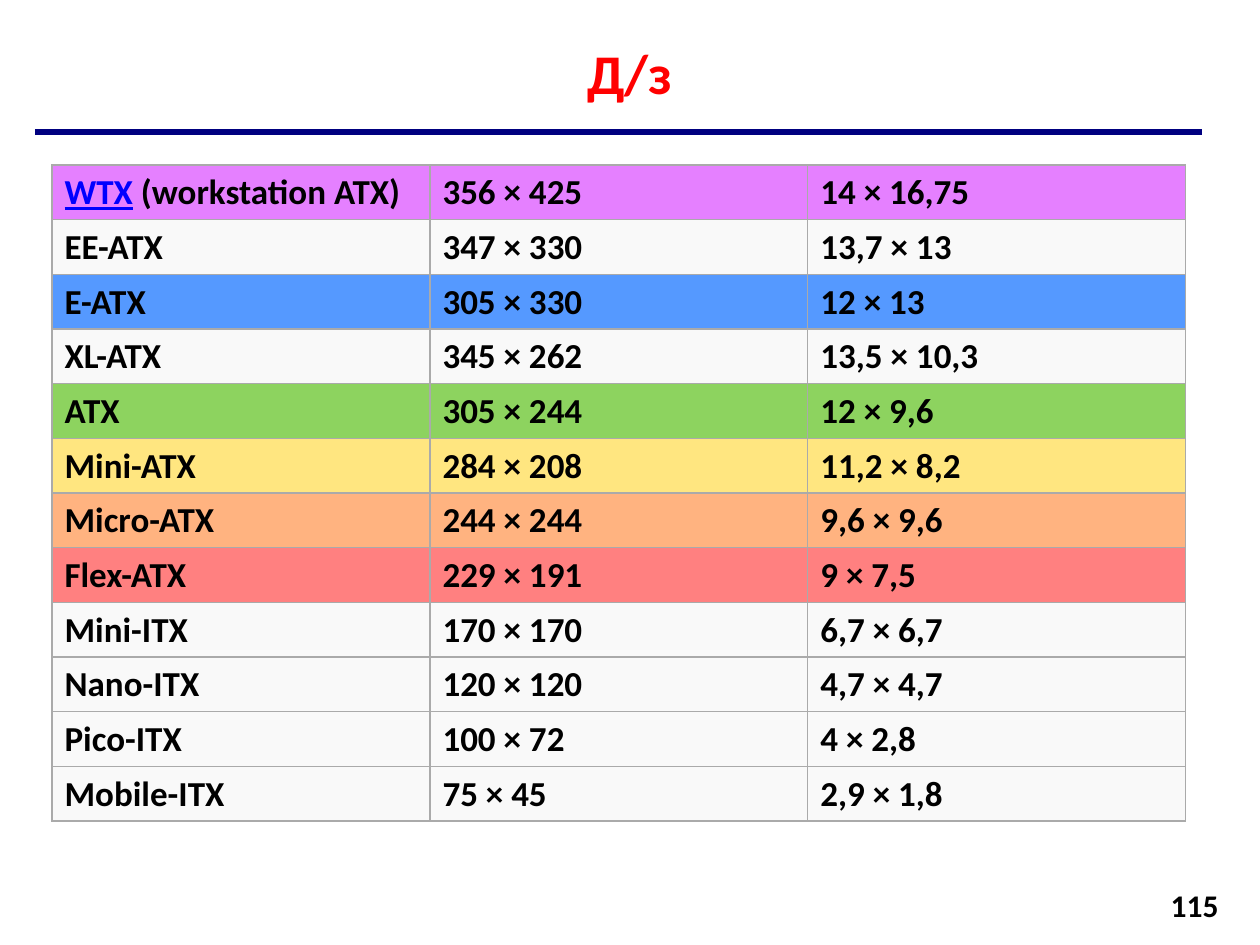
from dataclasses import dataclass

from lxml import etree
from pptx import Presentation, util as u
from pptx.dml.color import RGBColor
from pptx.enum import shapes, text
from pptx.oxml import ns

TITLE = "Д/з"
PAGE_NUMBER = "115"
FORM_FACTORS = [
    ("WTX (workstation ATX)", "356 × 425", "14 × 16,75"),
    ("EE-ATX", "347 × 330", "13,7 × 13"),
    ("E-ATX", "305 × 330", "12 × 13"),
    ("XL-ATX", "345 × 262", "13,5 × 10,3"),
    ("ATX", "305 × 244", "12 × 9,6"),
    ("Mini-ATX", "284 × 208", "11,2 × 8,2"),
    ("Micro-ATX", "244 × 244", "9,6 × 9,6"),
    ("Flex-ATX", "229 × 191", "9 × 7,5"),
    ("Mini-ITX", "170 × 170", "6,7 × 6,7"),
    ("Nano-ITX", "120 × 120", "4,7 × 4,7"),
    ("Pico-ITX", "100 × 72", "4 × 2,8"),
    ("Mobile-ITX", "75 × 45", "2,9 × 1,8"),
]
ROW_FILLS = {
    "WTX (workstation ATX)": "E580FF",
    "E-ATX": "5599FF",
    "ATX": "8DD35F",
    "Mini-ATX": "FFE680",
    "Micro-ATX": "FFB380",
    "Flex-ATX": "FF8080",
}
UNDERLINED = "WTX"


@dataclass(frozen=True)
class Theme:
    font: str = "Calibri"
    ink: str = "000000"
    title: str = "FF0000"
    rule: str = "000080"
    underlined: str = "0000FF"
    plain_row: str = "F9F9F9"
    border: str = "AAAAAA"
    title_size: int = 32
    table_size: int = 20
    number_size: int = 18
    rule_width: float = 3
    border_width: float = 0.75


THEME = Theme()
EMU_PER_PX = 914400 // 126


def px(*lengths):
    return [u.Emu(length * EMU_PER_PX) for length in lengths]


def add_run(paragraph, words, size, color=THEME.ink, underline=None):
    run = paragraph.add_run()
    run.text = words
    run.font.name = THEME.font
    run.font.size = u.Pt(size)
    run.font.bold = True
    run.font.underline = underline
    run.font.color.rgb = RGBColor.from_string(color)


def add_label(slide, box, words, size, color, align, anchor):
    frame = slide.shapes.add_textbox(*px(*box)).text_frame
    frame.word_wrap = True
    frame.vertical_anchor = anchor
    frame.paragraphs[0].alignment = align
    add_run(frame.paragraphs[0], words, size, color)


def add_rule(slide, left, right, y):
    rule = slide.shapes.add_connector(shapes.MSO_CONNECTOR.STRAIGHT, *px(left, y, right, y))
    rule.line.color.rgb = RGBColor.from_string(THEME.rule)
    rule.line.width = u.Pt(THEME.rule_width)
    etree.SubElement(rule._element.spPr, ns.qn("a:effectLst"))


def add_borders(cell):
    properties = cell._tc.get_or_add_tcPr()
    for position, side in enumerate(("lnL", "lnR", "lnT", "lnB")):
        border = etree.Element(ns.qn(f"a:{side}"), w=str(u.Pt(THEME.border_width)))
        fill = etree.SubElement(border, ns.qn("a:solidFill"))
        etree.SubElement(fill, ns.qn("a:srgbClr"), val=THEME.border)
        properties.insert(position, border)


def fill_cell(cell, words, fill):
    cell.fill.solid()
    cell.fill.fore_color.rgb = RGBColor.from_string(fill)
    cell.vertical_anchor = text.MSO_ANCHOR.MIDDLE
    add_borders(cell)
    paragraph = cell.text_frame.paragraphs[0]
    if words.startswith(UNDERLINED):
        add_run(paragraph, UNDERLINED, THEME.table_size, THEME.underlined, True)
        words = words.removeprefix(UNDERLINED)
    add_run(paragraph, words, THEME.table_size)


def add_form_factors(slide, left, top, column_width, row_height):
    rows, columns = len(FORM_FACTORS), len(FORM_FACTORS[0])
    box = px(left, top, columns * column_width, rows * row_height)
    table = slide.shapes.add_table(rows, columns, *box).table
    table.first_row = table.horz_banding = False
    for row, values in enumerate(FORM_FACTORS):
        fill = ROW_FILLS.get(values[0], THEME.plain_row)
        for column, words in enumerate(values):
            fill_cell(table.cell(row, column), words, fill)


def main():
    deck = Presentation()
    deck.slide_width, deck.slide_height = px(1260, 945)
    slide = deck.slides.add_slide(deck.slide_layouts[6])
    add_rule(slide, left=35, right=1202, y=132)
    add_label(slide, (937, 880, 294, 50), PAGE_NUMBER, THEME.number_size, THEME.ink,
              text.PP_ALIGN.RIGHT, text.MSO_ANCHOR.MIDDLE)
    add_label(slide, (39, 32, 1182, 81), TITLE, THEME.title_size, THEME.title,
              text.PP_ALIGN.CENTER, text.MSO_ANCHOR.TOP)
    add_form_factors(slide, left=52, top=165, column_width=378, row_height=54)
    deck.save("out.pptx")


if __name__ == "__main__":
    main()
